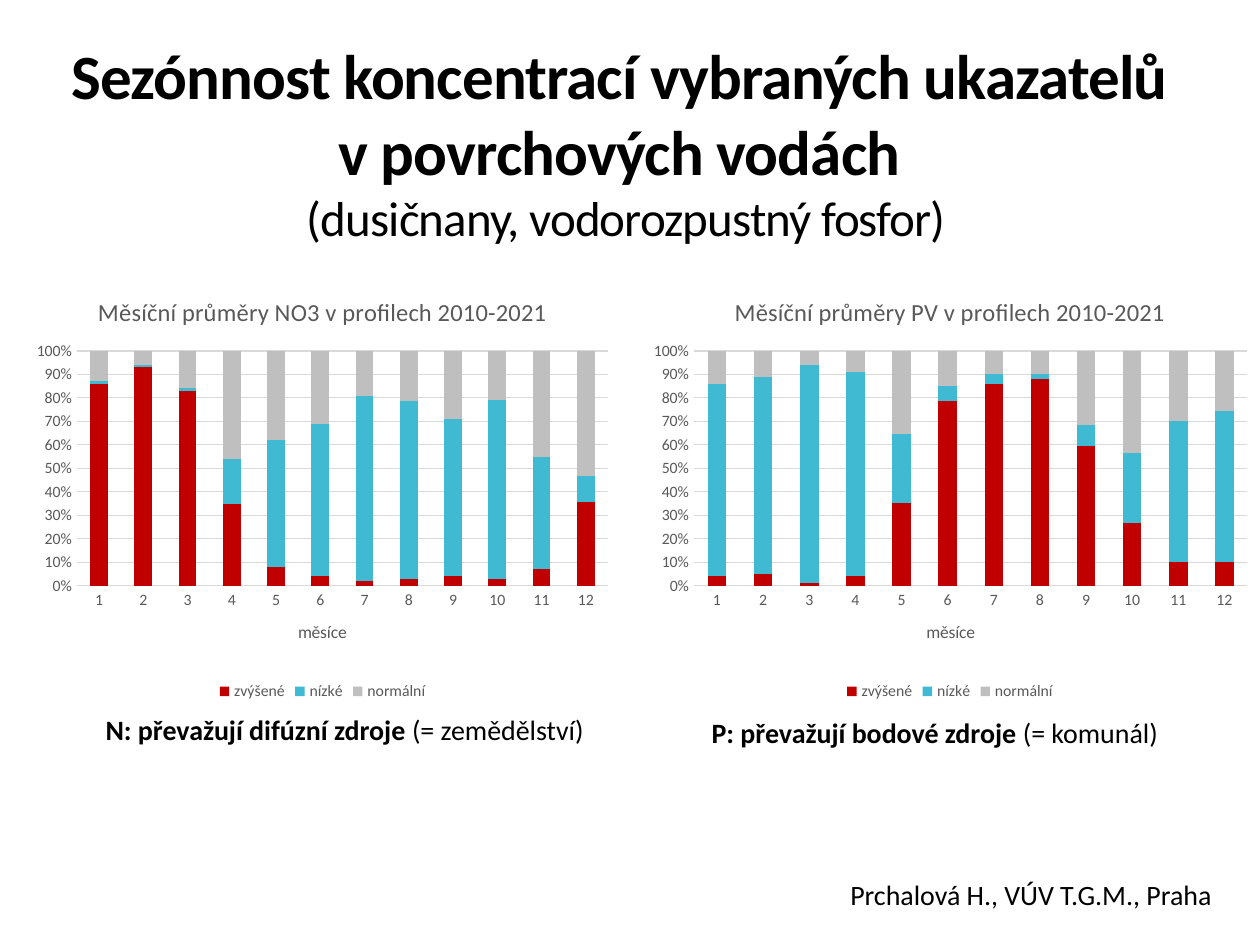
from lxml import etree
from pptx import Presentation
from pptx.chart.data import CategoryChartData
from pptx.dml.color import RGBColor
from pptx.enum.chart import XL_CHART_TYPE as CT, XL_LEGEND_POSITION as LP, XL_TICK_MARK as TM
from pptx.enum.text import MSO_ANCHOR, MSO_AUTO_SIZE as FIT, PP_ALIGN as AL
from pptx.oxml.ns import qn
from pptx.util import Inches, Pt

COLORS = {"text": "000000", "muted": "595959", "grid": "D9D9D9",
          "zvýšené": "C00000", "nízké": "40BAD2", "normální": "BFBFBF"}
PLOT = {"x": 0.087, "y": 0.177, "w": 0.893, "h": 0.545}
NITRATE = {
    "zvýšené": (86, 92, 83, 35, 8, 4, 2, 3, 4, 3, 7, 36),
    "nízké": (1, 1, 1, 19, 54, 65, 79, 75, 67, 76, 48, 11),
    "normální": (13, 6, 16, 46, 38, 31, 19, 21, 29, 21, 45, 54),
}
PHOSPHORUS = {
    "zvýšené": (4, 5, 1, 4, 35, 78, 86, 88, 60, 27, 10, 10),
    "nízké": (82, 84, 93, 87, 29, 6, 4, 2, 9, 30, 60, 65),
    "normální": (14, 11, 6, 9, 35, 15, 10, 10, 32, 44, 30, 26),
}


class Deck:
    """Slide style and the current slide, with positions as percent of the slide size."""

    def __init__(self, font="Calibri"):
        self.font = font
        self.prs = Presentation()
        self.prs.slide_width, self.prs.slide_height = Inches(10), Inches(7.5)
        self.s = self.prs.slides.add_slide(self.prs.slide_layouts[5])

    def box(self, x, y, w, h):
        sw, sh = self.prs.slide_width, self.prs.slide_height
        return [int(v * side / 100) for v, side in ((x, sw), (y, sh), (w, sw), (h, sh))]

    def style(self, font, size, color="text", bold=False):
        font.name, font.size, font.bold = self.font, Pt(size), bold
        font.color.rgb = RGBColor.from_string(COLORS[color])

    def run(self, p, text, size, color="text", bold=False):
        r = p.add_run()
        r.text = text
        self.style(r.font, size, color, bold)
        return r

    def title(self, at, lines):
        sp = self.s.shapes.title
        sp.left, sp.top, sp.width, sp.height = self.box(*at)
        tf = sp.text_frame
        tf.auto_size, tf.vertical_anchor, tf.word_wrap = FIT.NONE, MSO_ANCHOR.MIDDLE, True
        tf.margin_left = tf.margin_right = Inches(0.07)
        tf.margin_top = tf.margin_bottom = Inches(0.04)
        p = tf.paragraphs[0]
        p.alignment = AL.CENTER
        for i, (text, size, bold) in enumerate(lines):
            if i:
                p.add_line_break()
            r = self.run(p, text, size, bold=bold)
            r._r.get_or_add_rPr().set("spc", "-50")

    def text(self, at, *runs):
        tf = self.s.shapes.add_textbox(*self.box(*at)).text_frame
        tf.word_wrap, tf.auto_size = True, FIT.SHAPE_TO_FIT_TEXT
        p = tf.paragraphs[0]
        p.alignment, p.line_spacing, p.space_after = AL.JUSTIFY, 1.07, Pt(6)
        for text, bold in runs:
            self.run(p, text, 16, bold=bold)

    def heading(self, owner, text, size):
        p = owner.text_frame.paragraphs[0]
        self.run(p, text, size, "muted")

    def line(self, fmt):
        fmt.width = Pt(0.75)
        fmt.color.rgb = RGBColor.from_string(COLORS["grid"])

    def fix_plot(self, chart):
        area = chart._chartSpace.chart.plotArea
        for old in area.findall(qn("c:layout")):
            area.remove(old)
        layout = etree.Element(qn("c:layout"))
        area.insert(0, layout)
        manual = etree.SubElement(layout, qn("c:manualLayout"))
        values = {"layoutTarget": "inner", "xMode": "edge", "yMode": "edge", **PLOT}
        for tag, val in values.items():
            etree.SubElement(manual, qn(f"c:{tag}")).set("val", str(val))

    def chart(self, at, title, series):
        data = CategoryChartData()
        data.categories = [str(month) for month in range(1, 13)]
        for name, vals in series.items():
            data.add_series(name, vals)
        chart = self.s.shapes.add_chart(CT.COLUMN_STACKED_100, *self.box(*at), data).chart
        self.style(chart.font, 10)
        chart.has_title = True
        self.heading(chart.chart_title, title, 14)
        chart.chart_title.include_in_layout = False
        chart.has_legend = True
        chart.legend.position, chart.legend.include_in_layout = LP.BOTTOM, False
        self.style(chart.legend.font, 9, "muted")
        plot = chart.plots[0]
        plot.gap_width, plot.overlap, plot.vary_by_categories = 150, 100, False
        for ser in plot.series:
            ser.format.fill.solid()
            ser.format.fill.fore_color.rgb = RGBColor.from_string(COLORS[ser.name])
        cat, val = chart.category_axis, chart.value_axis
        for axis in (cat, val):
            axis.major_tick_mark = axis.minor_tick_mark = TM.NONE
            self.style(axis.tick_labels.font, 9, "muted")
        self.heading(cat.axis_title, "měsíce", 10)
        self.line(cat.format.line)
        val.format.line.fill.background()
        val.has_major_gridlines = True
        self.line(val.major_gridlines.format.line)
        val.tick_labels.number_format = "0%"
        val.tick_labels.number_format_is_linked = False
        self.fix_plot(chart)


def main():
    deck = Deck()
    deck.title((3.5, 6.93, 92.4, 16.13), [
        ("Sezónnost koncentrací vybraných ukazatelů ", 36, True),
        ("v povrchových vodách ", 36, True),
        ("(dusičnany, vodorozpustný fosfor)", 28, False)])
    deck.chart((2, 29.07, 47.2, 45.6), "Měsíční průměry NO3 v profilech 2010-2021", NITRATE)
    deck.chart((50.8, 29.07, 49.2, 45.6), "Měsíční průměry PV v profilech 2010-2021", PHOSPHORUS)
    deck.text((66.5, 92, 32.3, 4.93), ("Prchalová H., VÚV T.G.M., Praha", False))
    deck.text((7.4, 74.53, 41.7, 4.93),
              ("N: převažují difúzní zdroje ", True), ("(= zemědělství)", False))
    deck.text((55.5, 74.8, 40.4, 4.93),
              ("P: převažují bodové zdroje ", True), ("(= komunál)", False))
    deck.prs.save("out.pptx")


if __name__ == "__main__":
    main()
